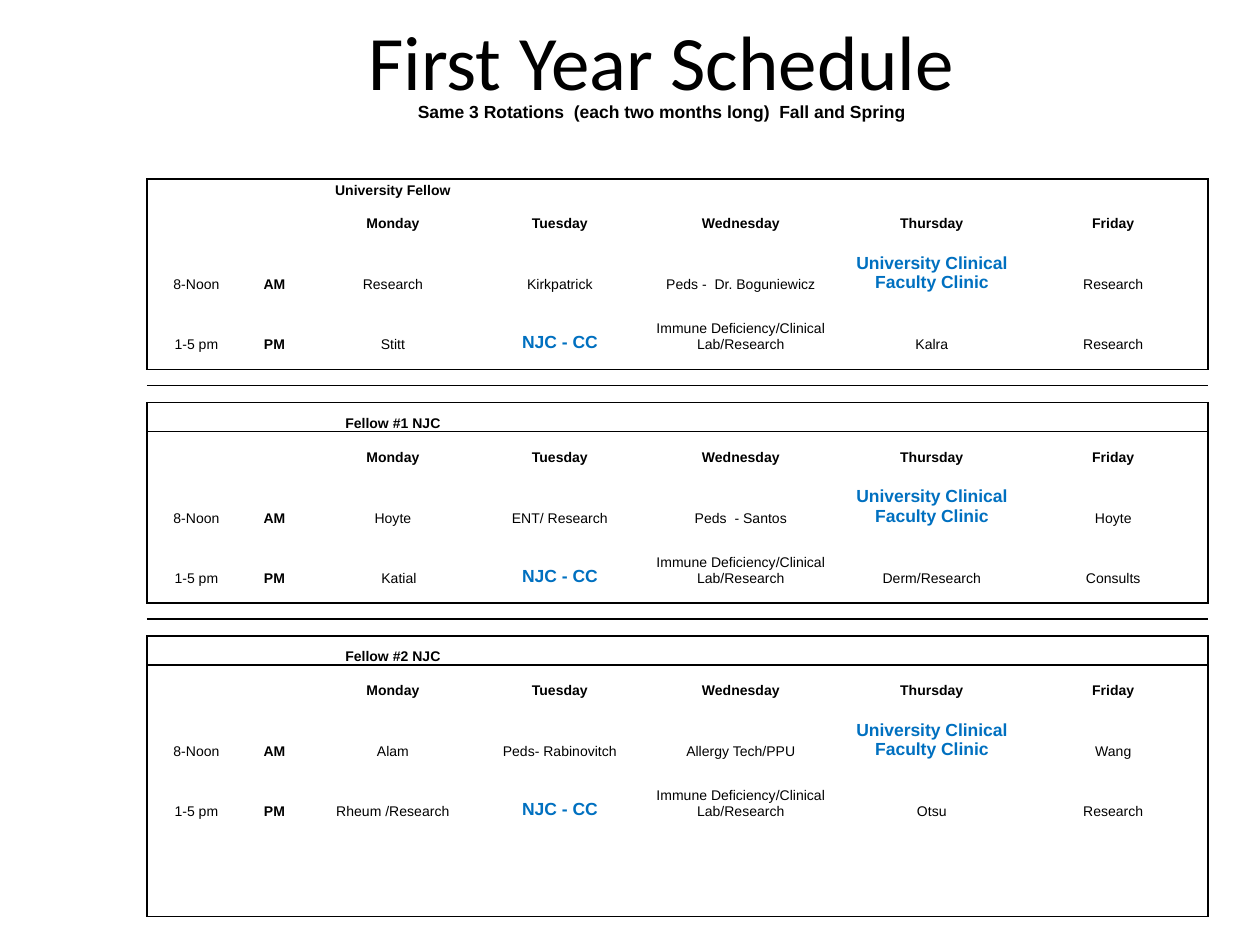
import pptx
import pptx.dml.color
import pptx.enum.text
import pptx.oxml.ns
import pptx.util
from lxml import etree

PX = 914400 // 126
COLORS = {"text": "000000", "clinic": "0070C0", "border": "000000"}
NO_GRID_STYLE = "{2D5ABB26-0587-4C30-8999-92F81FD0307C}"
COLUMNS = [99, 57, 180, 154, 208, 174, 189]
DAYS = ["", "", "Monday", "Tuesday", "Wednesday", "Thursday", "Friday"]
CLINIC = "University Clinical Faculty Clinic"
NJC = "NJC - CC"
LAB = "Immune Deficiency/Clinical Lab/Research"
BOLD = {"AM", "PM", *DAYS}
SPACER = [""] * len(COLUMNS)
GAP_HEIGHTS = [16, 17]

FELLOWS = [
    ("University Fellow", 19, 17,
     ["Research", "Kirkpatrick", "Peds -  Dr. Boguniewicz", CLINIC, "Research"],
     ["Stitt", NJC, LAB, "Kalra", "Research"]),
    ("Fellow #1 NJC", 29, 17,
     ["Hoyte", "ENT/ Research", "Peds  - Santos", CLINIC, "Hoyte"],
     ["Katial", NJC, LAB, "Derm/Research", "Consults"]),
    ("Fellow #2 NJC", 29, 97,
     ["Alam", "Peds- Rabinovitch", "Allergy Tech/PPU", CLINIC, "Wang"],
     ["Rheum /Research", NJC, LAB, "Otsu", "Research"]),
]


def px(n):
    return pptx.util.Emu(n * PX)


def style(p, size, color="text", bold=False, name="Arial"):
    p.alignment = pptx.enum.text.PP_ALIGN.CENTER
    p.font.size = pptx.util.Pt(size)
    p.font.name = name
    p.font.bold = bold
    p.font.color.rgb = pptx.dml.color.RGBColor.from_string(COLORS[color])


def add_heading(slide):
    tf = slide.shapes.add_textbox(px(105), px(14), px(1113), px(120)).text_frame
    tf.word_wrap = True
    tf.margin_top = tf.margin_bottom = 0
    p = tf.paragraphs[0]
    p.text = "First Year Schedule"
    style(p, 44, name="Calibri")
    p = tf.add_paragraph()
    p.text = "Same 3 Rotations  (each two months long)  Fall and Spring"
    style(p, 10, bold=True)
    p.line_spacing = 0.7


def add_borders(cell, widths):
    tc_pr = cell._tc.get_or_add_tcPr()
    qn = pptx.oxml.ns.qn
    for side in "LRTB":
        if side in widths:
            ln = etree.SubElement(tc_pr, qn(f"a:ln{side}"), w=str(pptx.util.Pt(widths[side])))
            fill = etree.SubElement(ln, qn("a:solidFill"))
            etree.SubElement(fill, qn("a:srgbClr"), val=COLORS["border"])


def fill_cell(cell, text, bold, borders):
    add_borders(cell, borders)
    cell.fill.background()
    cell.vertical_anchor = pptx.enum.text.MSO_ANCHOR.BOTTOM
    cell.margin_left = cell.margin_right = cell.margin_top = px(1)
    cell.margin_bottom = 0
    p = cell.text_frame.paragraphs[0]
    if not text:
        p._p.get_or_add_endParaRPr().set("sz", "600")
        return
    p.text = text
    if text in (CLINIC, NJC):
        style(p, 10, "clinic", True)
    else:
        style(p, 8, bold=bold)
    if text == "Katial":
        cell.margin_left = px(13)


def schedule_rows():
    rows = []
    for i, (fellow, top, bottom, morning, afternoon) in enumerate(FELLOWS):
        if i:
            rows += [(h, SPACER, side) for h, side in zip(GAP_HEIGHTS, "TB")]
        rows += [
            (top, ["", "", fellow, "", "", "", ""], "LRT"),
            (16, SPACER, "LR"),
            (17, DAYS, "LR"),
            (17, SPACER, "LR"),
            (44, ["8-Noon", "AM", *morning], "LR"),
            (16, SPACER, "LR"),
            (44, ["1-5 pm", "PM", *afternoon], "LR"),
            (bottom, SPACER, "LRB"),
        ]
    return rows


def add_schedule(slide):
    rows = schedule_rows()
    last = len(COLUMNS) - 1
    fellows = {fellow[0] for fellow in FELLOWS}
    table = slide.shapes.add_table(
        len(rows), len(COLUMNS), px(147), px(179),
        px(sum(COLUMNS)), px(sum(row[0] for row in rows))).table
    table.first_row = table.horz_banding = False
    table._tbl.tblPr.find(pptx.oxml.ns.qn("a:tableStyleId")).text = NO_GRID_STYLE
    for column, width in zip(table.columns, COLUMNS):
        column.width = px(width)
    for r, (height, texts, sides) in enumerate(rows):
        table.rows[r].height = px(height)
        for c, text in enumerate(texts):
            hidden = {"L"} if c else set()
            if c != last:
                hidden.add("R")
            borders = {side: 1 for side in sides if side not in hidden}
            if (r, c) == (4, last):
                borders["R"] = 1.5
            fill_cell(table.cell(r, c), text, text in BOLD or text in fellows, borders)


def main():
    prs = pptx.Presentation()
    prs.slide_width = pptx.util.Inches(10)
    prs.slide_height = pptx.util.Inches(7.5)
    slide = prs.slides.add_slide(prs.slide_layouts[6])
    add_heading(slide)
    add_schedule(slide)
    prs.save("out.pptx")


if __name__ == "__main__":
    main()
